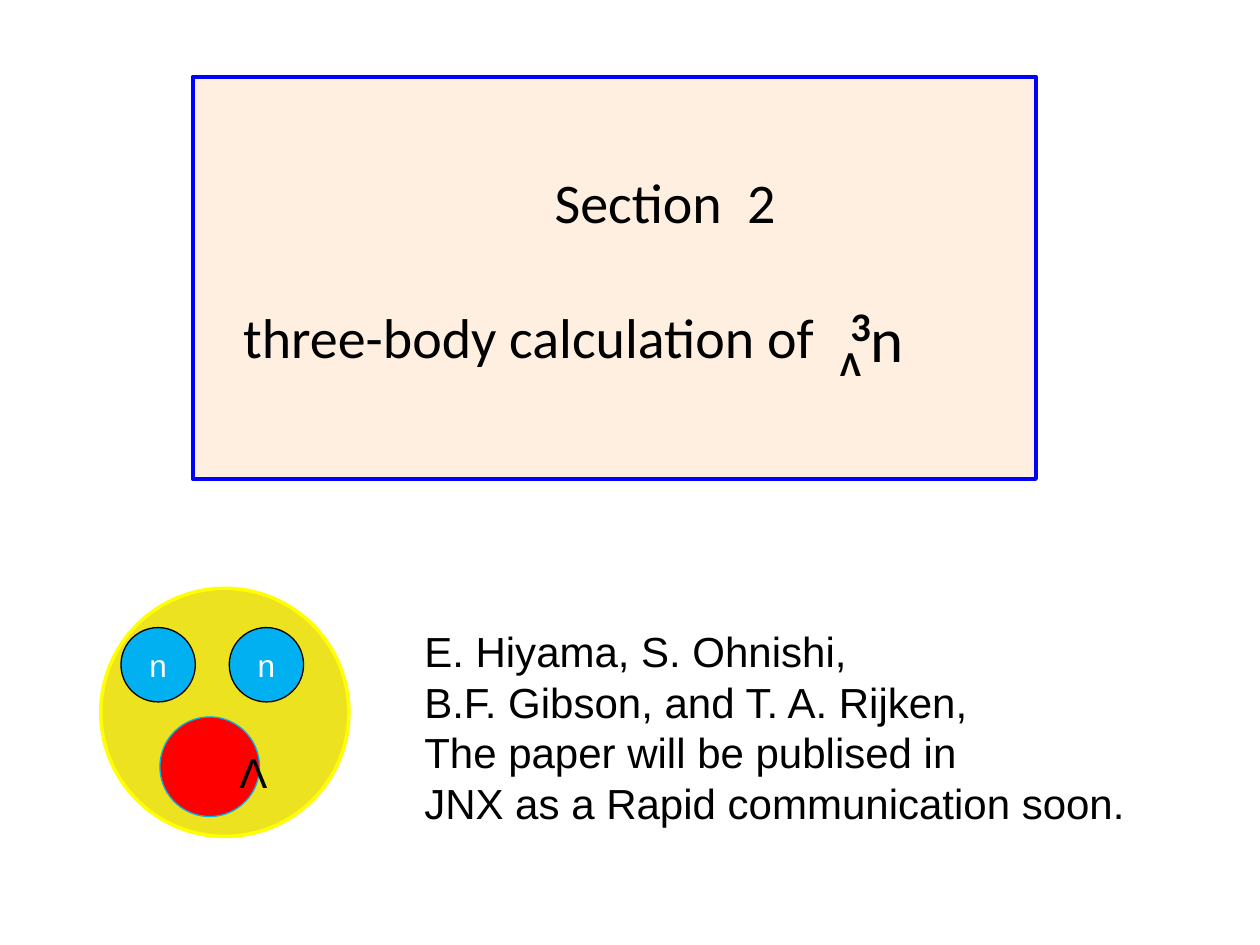
"""Build the section slide on the three-body calculation."""
from dataclasses import dataclass

from lxml.etree import SubElement
from pptx import Presentation
from pptx.dml.color import RGBColor
from pptx.enum.shapes import MSO_SHAPE
from pptx.enum.text import MSO_ANCHOR, MSO_AUTO_SIZE, PP_ALIGN
from pptx.oxml.ns import qn
from pptx.util import Pt

COLORS = {
    "black": "000000", "white": "FFFFFF", "panel": "FFCC99", "frame": "0000FF",
    "nucleus": "ECE220", "halo": "FFFF00", "neutron": "00B0F0", "hyperon": "FF0000",
}


@dataclass(frozen=True)
class Ball:
    left: float
    top: float
    diameter: float
    fill: str
    line: str
    line_width: float = 0.75
    label: str = ""


@dataclass(frozen=True)
class Label:
    left: float
    top: float
    width: float
    height: float
    lines: tuple[str, ...]
    size: float
    font: str = "Arial"
    bold: bool = False


BALLS = (
    Ball(57.6, 336.2, 141.8, "nucleus", "halo", 2),
    Ball(69.1, 358.6, 42.5, "neutron", "black", label="n"),
    Ball(91.4, 409.7, 56.9, "hyperon", "neutron"),
    Ball(131, 358.6, 42.5, "neutron", "black", label="n"),
)
AUTHORS = (
    "E. Hiyama, S. Ohnishi,",
    "B.F. Gibson, and T. A. Rijken,",
    "The paper will be publised in",
    "JNX as a Rapid communication soon.",
)
LABELS = (
    Label(473, 191.5, 34.6, 31, ("Λ",), 20, "Calibri", True),
    Label(129.8, 423, 31, 36, ("Λ",), 24),
    Label(235.4, 354.2, 424, 124, AUTHORS, 24),
)


def color(name: str) -> RGBColor:
    """Return the named colour."""
    return RGBColor.from_string(COLORS[name])


def paint(shape, fill: str, line: str, width: float) -> None:
    """Give a shape a solid fill and an outline."""
    shape.fill.solid()
    shape.fill.fore_color.rgb = color(fill)
    shape.line.color.rgb = color(line)
    shape.line.width = Pt(width)


def add_span(para, text: str, *, size: float, font: str = "Calibri",
             bold: bool = False, ink: str = "black", baseline: int = 0) -> None:
    """Append a formatted run; baseline is a percentage shift."""
    span = para.add_run()
    span.text = text
    span.font.size = Pt(size)
    span.font.name = font
    span.font.bold = bold
    span.font.color.rgb = color(ink)
    if baseline:
        span.font._element.set("baseline", str(baseline * 1000))


def add_box(page, left: float, top: float, width: float, height: float):
    """Add an unwrapped text box and return its text frame."""
    box = page.shapes.add_textbox(Pt(left), Pt(top), Pt(width), Pt(height))
    box.text_frame.word_wrap = False
    return box.text_frame


def fill_title(page) -> None:
    """Frame the title placeholder and write its two lines."""
    title = page.shapes.title
    title.left, title.top, title.width, title.height = Pt(110.2), Pt(43.9), Pt(481.7), Pt(229.7)
    paint(title, "panel", "frame", 2.5)
    tint = title.fill._xPr.find(qn("a:solidFill"))[0]
    SubElement(tint, qn("a:alpha")).set("val", "30000")
    frame = title.text_frame
    frame.auto_size = MSO_AUTO_SIZE.NONE
    frame.vertical_anchor = MSO_ANCHOR.TOP
    frame.margin_top = Pt(52)
    lines = (("Section  2", 199.5, 0), ("three-body calculation of", 21.5, 38.4))
    for index, (text, indent, gap) in enumerate(lines):
        para = frame.add_paragraph() if index else frame.paragraphs[0]
        para.alignment = PP_ALIGN.LEFT
        para.space_before = Pt(gap)
        para._p.get_or_add_pPr().set("marL", str(Pt(indent)))
        add_span(para, text, size=32)


def add_ball(page, ball: Ball) -> None:
    """Draw a particle with its centred label."""
    shape = page.shapes.add_shape(MSO_SHAPE.OVAL, Pt(ball.left), Pt(ball.top),
                                  Pt(ball.diameter), Pt(ball.diameter))
    shape.shadow.inherit = False
    paint(shape, ball.fill, ball.line, ball.line_width)
    if ball.label:
        frame = shape.text_frame
        frame.word_wrap = False
        frame.vertical_anchor = MSO_ANCHOR.MIDDLE
        frame.paragraphs[0].alignment = PP_ALIGN.CENTER
        add_span(frame.paragraphs[0], ball.label, size=18, font="Arial", ink="white")


def add_label(page, label: Label) -> None:
    """Write one paragraph per line of a label."""
    frame = add_box(page, label.left, label.top, label.width, label.height)
    for index, text in enumerate(label.lines):
        para = frame.add_paragraph() if index else frame.paragraphs[0]
        add_span(para, text, size=label.size, font=label.font, bold=label.bold)


def main() -> None:
    """Create and save the deck."""
    deck = Presentation()
    deck.slide_width, deck.slide_height = Pt(720), Pt(540)
    page = deck.slides.add_slide(deck.slide_layouts[5])
    fill_title(page)
    isotope = add_box(page, 478.8, 163.4, 47.5, 51.1).paragraphs[0]
    add_span(isotope, "3", size=40, bold=True, baseline=30)
    add_span(isotope, "n", size=36)
    for ball in BALLS:
        add_ball(page, ball)
    for label in LABELS:
        add_label(page, label)
    deck.save("out.pptx")


if __name__ == "__main__":
    main()
